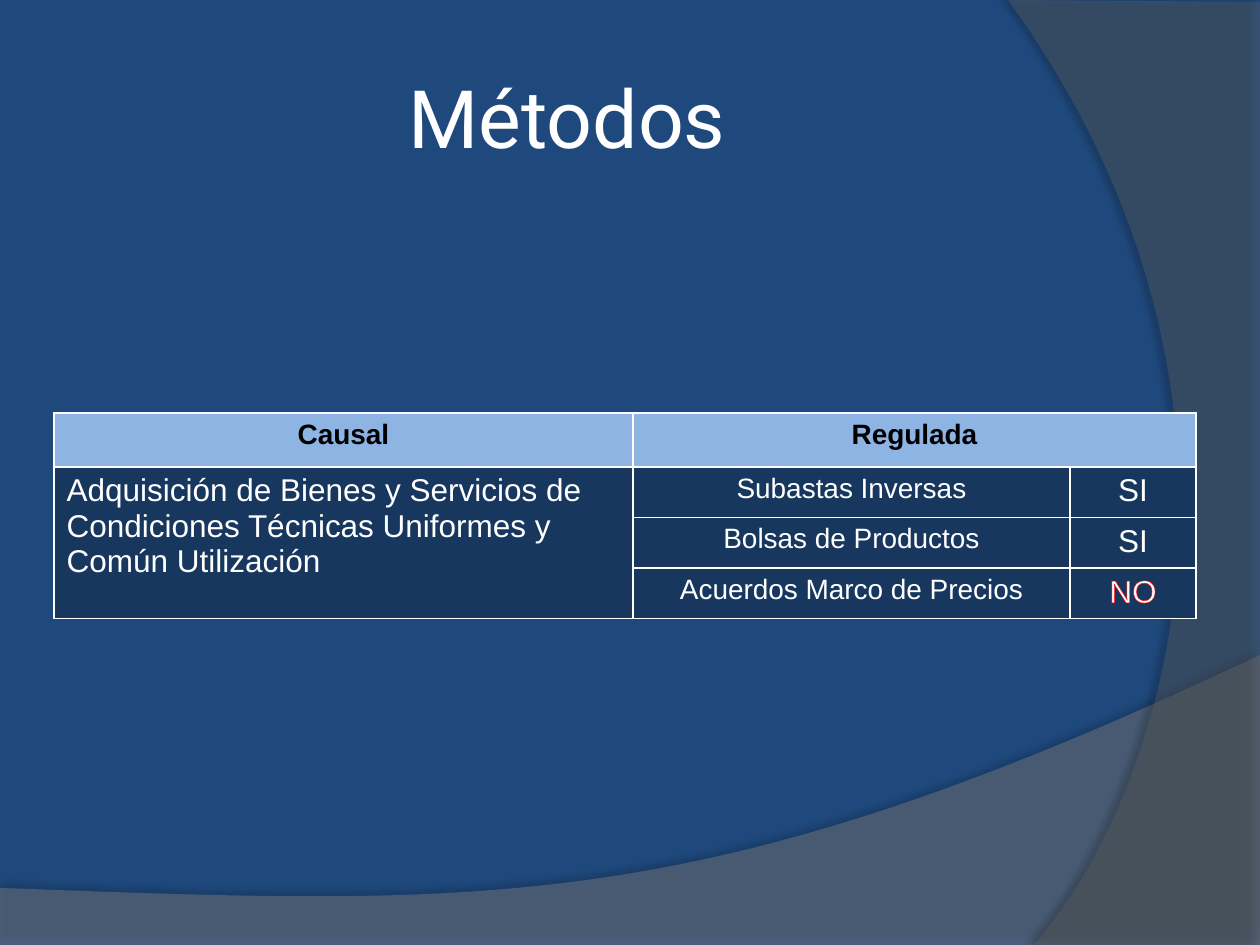
from lxml.etree import SubElement
from pptx import Presentation
from pptx.dml.color import RGBColor
from pptx.enum.text import MSO_ANCHOR, PP_ALIGN
from pptx.oxml import parse_xml
from pptx.oxml.ns import nsdecls, qn
from pptx.util import Emu, Pt

SCALE = 914400 / 126
NAVY = RGBColor(0x1F, 0x49, 0x7D)
DEEP = RGBColor(0x17, 0x37, 0x5E)
SKY = RGBColor(0x8E, 0xB4, 0xE3)
GRAY = RGBColor(0x7F, 0x7F, 0x7F)
DARK = RGBColor(0x5E, 0x5E, 0x5E)
WHITE = RGBColor(0xFF, 0xFF, 0xFF)
BLACK = RGBColor(0, 0, 0)
RED = RGBColor(0xFF, 0, 0)

HEAD = {"name": "Arial", "size": Pt(16), "bold": True}
BODY = {"name": "Arial", "size": Pt(16), "bold": False}
LARGE = {**BODY, "size": Pt(18)}
TITLE = {"name": "Roboto", "size": Pt(46)}

COLS = (579, 437, 126)
ROWS = (54, 44, 44, 44)
METHODS = (("Subastas Inversas", "SI"),
           ("Bolsas de Productos", "SI"),
           ("Acuerdos Marco de Precios", "NO"))


def px(n):
    return Emu(round(n * SCALE))


def style(item, look):
    for key, value in look.items():
        setattr(item, key, value)


def paint(item, color):
    item.fill.solid()
    item.fill.fore_color.rgb = color


def outline(color, width, tag="ln"):
    return parse_xml(f'<a:{tag} {nsdecls("a")} w="{Pt(width)}"><a:solidFill>'
                     f'<a:srgbClr val="{color}"/></a:solidFill></a:{tag}>')


def curve(a, b, c, d, steps=60):
    """Points along a cubic curve after its start."""
    for i in range(1, steps + 1):
        t = i / steps
        u = 1 - t
        yield tuple(u**3 * p + 3 * u * u * t * q + 3 * u * t * t * r + t**3 * s
                    for p, q, r, s in zip(a, b, c, d))


def add_wave(slide, points, color, alpha, shade):
    spots = [(px(x), px(y)) for x, y in points]
    pen = slide.shapes.build_freeform(*spots[0])
    pen.add_line_segments(spots[1:], close=True)
    wave = pen.convert_to_shape()
    paint(wave, color)
    wave.line.fill.background()
    tone = wave._element.spPr.find(".//" + qn("a:srgbClr"))
    SubElement(tone, qn("a:alpha"), val=str(alpha * 1000))
    depth, blur, dist, angle = shade
    wave._element.spPr.append(parse_xml(
        f'<a:effectLst {nsdecls("a")}><a:outerShdw blurRad="{Pt(blur)}" '
        f'dist="{Pt(dist)}" dir="{angle * 60000}" algn="ctr" rotWithShape="0">'
        f'<a:srgbClr val="000000"><a:alpha val="{depth * 1000}"/></a:srgbClr>'
        '</a:outerShdw></a:effectLst>'))


def write(frame, text, look, color, align):
    para = frame.paragraphs[0]
    para.alignment = align
    run = para.add_run()
    run.text = text
    style(run.font, look)
    run.font.color.rgb = color
    return run


def add_title(slide, text):
    box = slide.shapes.add_textbox(px(0), px(38), px(1134), px(157))
    frame = box.text_frame
    sides = ("left", "top", "right", "bottom")
    style(frame, {"word_wrap": True, "vertical_anchor": MSO_ANCHOR.MIDDLE,
                  **{f"margin_{side}": px(6) for side in sides}})
    write(frame, text, TITLE, WHITE, PP_ALIGN.CENTER)


def fill_cell(cell, text, look, color=WHITE, align=PP_ALIGN.CENTER):
    run = write(cell.text_frame, text, look, color, align)
    if align == PP_ALIGN.CENTER:
        props = cell.text_frame.paragraphs[0]._p.get_or_add_pPr()
        props.set("marL", str(px(48)))
        props.set("indent", str(-px(48)))
    return run


def add_grid(slide):
    grid = slide.shapes.add_table(len(ROWS), len(COLS), px(54), px(413),
                                  px(sum(COLS)), px(sum(ROWS))).table
    for col, width in zip(grid.columns, COLS):
        col.width = px(width)
    for row, height in zip(grid.rows, ROWS):
        row.height = px(height)

    # Fills and white borders
    for r, row in enumerate(grid.rows):
        for cell in row.cells:
            paint(cell, DEEP if r else SKY)
            props = cell._tc.get_or_add_tcPr()
            for i, tag in enumerate(("lnL", "lnR", "lnT", "lnB")):
                props.insert(i, outline(WHITE, 1, tag))
    grid.cell(0, 1).merge(grid.cell(0, 2))
    grid.cell(1, 0).merge(grid.cell(3, 0))

    # Wording
    for c, text in enumerate(("Causal", "Regulada")):
        fill_cell(grid.cell(0, c), text, HEAD, BLACK)
    fill_cell(grid.cell(1, 0), "Adquisición de Bienes y Servicios de Condiciones "
              "Técnicas Uniformes y Común Utilización", LARGE, align=PP_ALIGN.LEFT)
    for r, (method, answer) in enumerate(METHODS, 1):
        fill_cell(grid.cell(r, 1), method, BODY)
        run = fill_cell(grid.cell(r, 2), answer, LARGE)
        if answer == "NO":
            run._r.get_or_add_rPr().insert(0, outline(RED, 0.75))


def main():
    deck = Presentation()
    style(deck, {"slide_width": px(1260), "slide_height": px(945)})
    slide = deck.slides.add_slide(deck.slide_layouts[6])
    paint(slide.background, NAVY)

    # Bottom and right waves
    low = [(0, 888), (0, 946), (1260, 946), (1260, 655),
           *curve((1260, 655), (704, 919), (493, 906), (0, 888))]
    side = [(1260, 2), (1260, 945), (1034, 945),
            *curve((1034, 945), (1178, 780), (1283, 378), (1008, 0))]
    add_wave(slide, low, GRAY, 45, (35, 4, 3.5, 270))
    add_wave(slide, side, DARK, 40, (45, 4, 4, 180))

    add_title(slide, "Métodos")
    add_grid(slide)
    deck.save("out.pptx")


if __name__ == "__main__":
    main()
